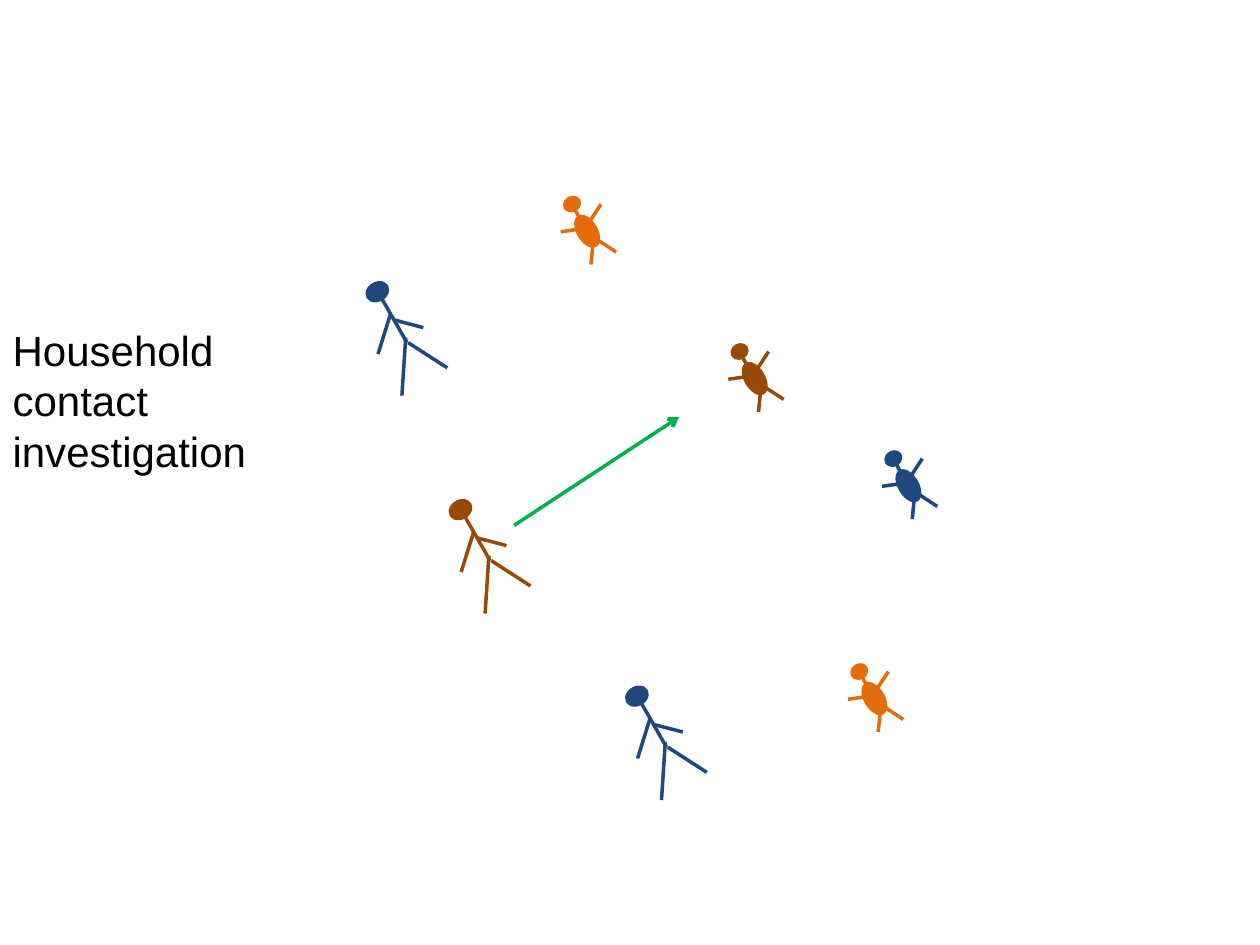
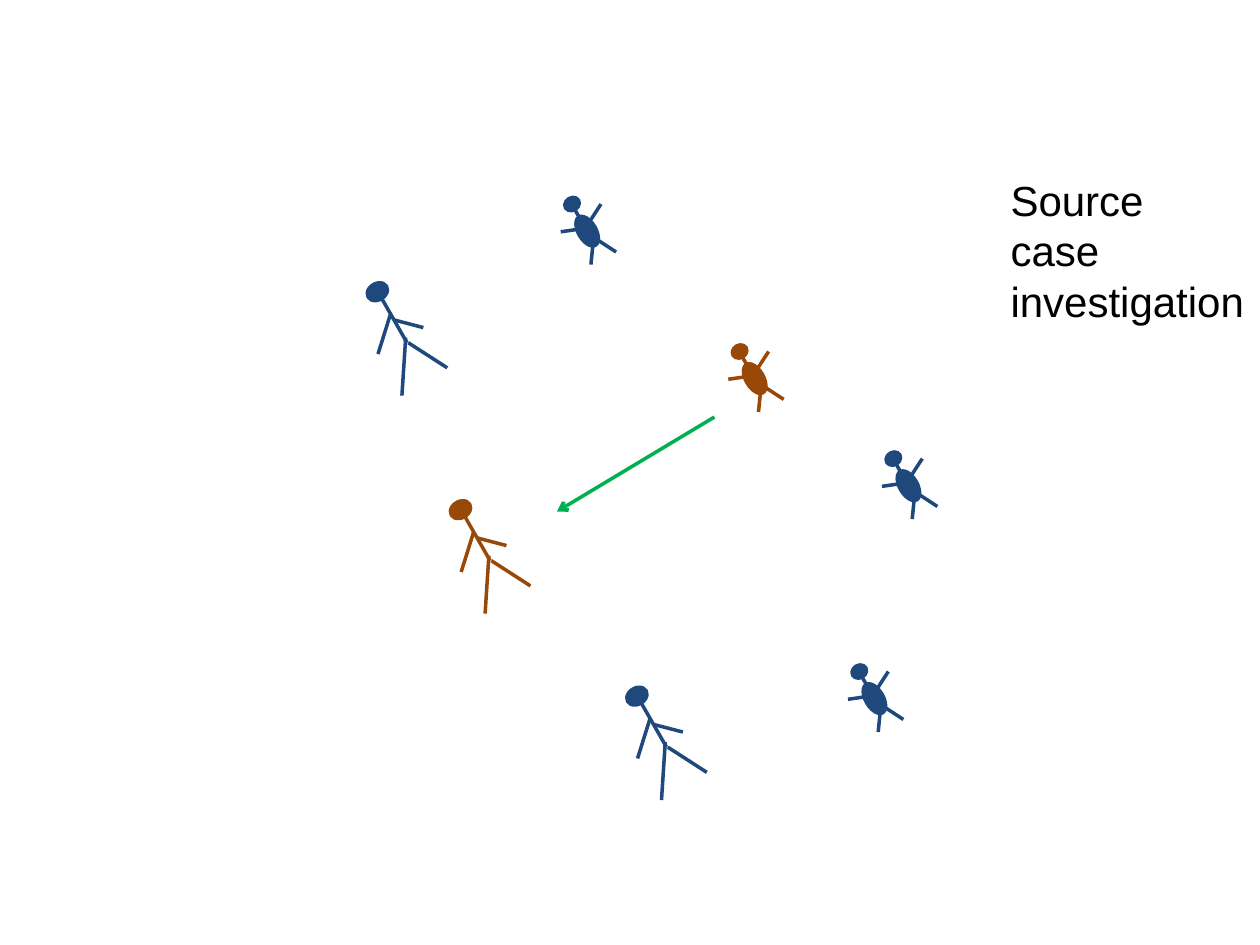
from dataclasses import dataclass
from typing import NamedTuple

from pptx import Presentation
from pptx.dml.color import RGBColor
from pptx.enum.shapes import MSO_CONNECTOR, MSO_SHAPE
from pptx.enum.text import MSO_ANCHOR, MSO_AUTO_SIZE, PP_ALIGN
from pptx.oxml.ns import qn
from pptx.shapes.connector import Connector
from pptx.slide import Slide
from pptx.util import Emu, Inches, Pt
from lxml.etree import SubElement

# Grid: every length below is counted in columns and rows of this grid
SLIDE_WIDTH, SLIDE_HEIGHT = Inches(10), Inches(7.5)
COLUMNS, ROWS = 100, 75


@dataclass(frozen=True)
class Theme:
    well: RGBColor = RGBColor(0x1F, 0x49, 0x7D)
    exposed: RGBColor = RGBColor(0xE4, 0x6C, 0x0A)
    case: RGBColor = RGBColor(0x98, 0x48, 0x07)
    arrow: RGBColor = RGBColor(0x00, 0xB0, 0x50)
    text: RGBColor = RGBColor(0x00, 0x00, 0x00)
    font: str = "Arial"
    title_size: Pt = Pt(24)
    title_spacing: Pt = Pt(29)
    line_width: Pt = Pt(2)
    lean: float = 329.6


THEME = Theme()


class Point(NamedTuple):
    column: float
    row: float

    def shifted(self, offset: "Point") -> "Point":
        return Point(self.column + offset.column, self.row + offset.row)


class Segment(NamedTuple):
    start: Point
    end: Point


class Oval(NamedTuple):
    corner: Point
    width: float
    height: float


@dataclass(frozen=True)
class Figure:
    """Parts of a stick figure, measured from the corner of its head."""
    head: Oval
    limbs: tuple[Segment, ...]
    body: tuple[Oval, ...] = ()


@dataclass(frozen=True)
class Person:
    figure: Figure
    place: Point
    color: RGBColor


@dataclass(frozen=True)
class Investigation:
    title_lines: tuple[str, ...]
    title_place: Point
    arrow: Segment
    bystander_child_color: RGBColor


# Stick figures
ADULT = Figure(
    head=Oval(Point(0, 0), 1.7, 1.3),
    limbs=(
        Segment(Point(1.2, 1.2), Point(3.2, 4.7)),
        Segment(Point(3.1, 4.3), Point(2.8, 8.9)),
        Segment(Point(3.3, 4.7), Point(6.4, 6.7)),
        Segment(Point(1.9, 2.4), Point(0.9, 5.6)),
        Segment(Point(4.5, 3.5), Point(2.2, 2.9)),
    ),
)
CHILD = Figure(
    head=Oval(Point(0, 0), 1.2, 1),
    limbs=(
        Segment(Point(0.8, 0.9), Point(2.3, 3.5)),
        Segment(Point(2.4, 2.3), Point(2.1, 5.3)),
        Segment(Point(1.8, 2.8), Point(4.1, 4.3)),
        Segment(Point(1.8, 2.4), Point(-0.3, 2.7)),
        Segment(Point(2.9, 0.5), Point(1.6, 2.5)),
    ),
    body=(Oval(Point(1.1, 1.35), 1.4, 2.6),),
)

# The two slides
INVESTIGATIONS = (
    Investigation(("Household", "contact", "investigation"), Point(0, 25.2),
                  Segment(Point(40.8, 41.7), Point(53.9, 33.1)), THEME.exposed),
    Investigation(("Source", "case", "investigation"), Point(79.2, 13.3),
                  Segment(Point(56.7, 33.1), Point(44.2, 40.6)), THEME.well),
)
TITLE_WIDTH, TITLE_HEIGHT = 22.5, 13.1


def household(bystander_child_color: RGBColor) -> tuple[Person, ...]:
    return (
        Person(ADULT, Point(29.1, 22.5), THEME.well),
        Person(ADULT, Point(35.7, 39.8), THEME.case),
        Person(ADULT, Point(49.7, 54.6), THEME.well),
        Person(CHILD, Point(44.8, 15.7), bystander_child_color),
        Person(CHILD, Point(58.1, 27.4), THEME.case),
        Person(CHILD, Point(70.3, 35.9), THEME.well),
        Person(CHILD, Point(67.6, 52.8), bystander_child_color),
    )


def across(columns: float) -> Emu:
    return Emu(round(SLIDE_WIDTH * columns / COLUMNS))


def down(rows: float) -> Emu:
    return Emu(round(SLIDE_HEIGHT * rows / ROWS))


def add_line(shapes, segment: Segment, color: RGBColor) -> Connector:
    start, end = segment
    line = shapes.add_connector(
        MSO_CONNECTOR.STRAIGHT, across(start.column), down(start.row),
        across(end.column), down(end.row))
    line.line.color.rgb = color
    line.line.width = THEME.line_width
    SubElement(line._element.spPr, qn("a:effectLst"))
    return line


def add_oval(shapes, oval: Oval, place: Point, color: RGBColor) -> None:
    corner = oval.corner.shifted(place)
    shape = shapes.add_shape(
        MSO_SHAPE.OVAL, across(corner.column), down(corner.row),
        across(oval.width), down(oval.height))
    shape.rotation = THEME.lean
    shape.shadow.inherit = False
    shape.fill.solid()
    shape.fill.fore_color.rgb = color
    shape.line.color.rgb = color
    shape.line.width = THEME.line_width


def add_person(slide: Slide, person: Person) -> None:
    shapes = slide.shapes.add_group_shape().shapes
    figure, place, color = person.figure, person.place, person.color
    add_oval(shapes, figure.head, place, color)
    for limb in figure.limbs:
        moved = Segment(limb.start.shifted(place), limb.end.shifted(place))
        add_line(shapes, moved, color)
    for oval in figure.body:
        add_oval(shapes, oval, place, color)


def add_arrow(slide: Slide, segment: Segment) -> None:
    arrow = add_line(slide.shapes, segment, THEME.arrow)
    outline = arrow._element.spPr.find(qn("a:ln"))
    SubElement(outline, qn("a:tailEnd"), type="arrow")


def set_title(slide: Slide, lines: tuple[str, ...], place: Point) -> None:
    title = slide.shapes.title
    title.left, title.top = across(place.column), down(place.row)
    title.width, title.height = across(TITLE_WIDTH), down(TITLE_HEIGHT)
    frame = title.text_frame
    frame.word_wrap = True
    frame.auto_size = MSO_AUTO_SIZE.SHAPE_TO_FIT_TEXT
    frame.vertical_anchor = MSO_ANCHOR.TOP
    for index, text in enumerate(lines):
        paragraph = frame.add_paragraph() if index else frame.paragraphs[0]
        paragraph.alignment = PP_ALIGN.LEFT
        paragraph.line_spacing = THEME.title_spacing
        run = paragraph.add_run()
        run.text = text
        run.font.name = THEME.font
        run.font.size = THEME.title_size
        run.font.color.rgb = THEME.text


def main() -> None:
    presentation = Presentation()
    presentation.slide_width = SLIDE_WIDTH
    presentation.slide_height = SLIDE_HEIGHT
    title_only = presentation.slide_layouts.get_by_name("Title Only")
    for investigation in INVESTIGATIONS:
        slide = presentation.slides.add_slide(title_only)
        set_title(slide, investigation.title_lines, investigation.title_place)
        add_arrow(slide, investigation.arrow)
        for person in household(investigation.bystander_child_color):
            add_person(slide, person)
    presentation.save("out.pptx")


if __name__ == "__main__":
    main()
